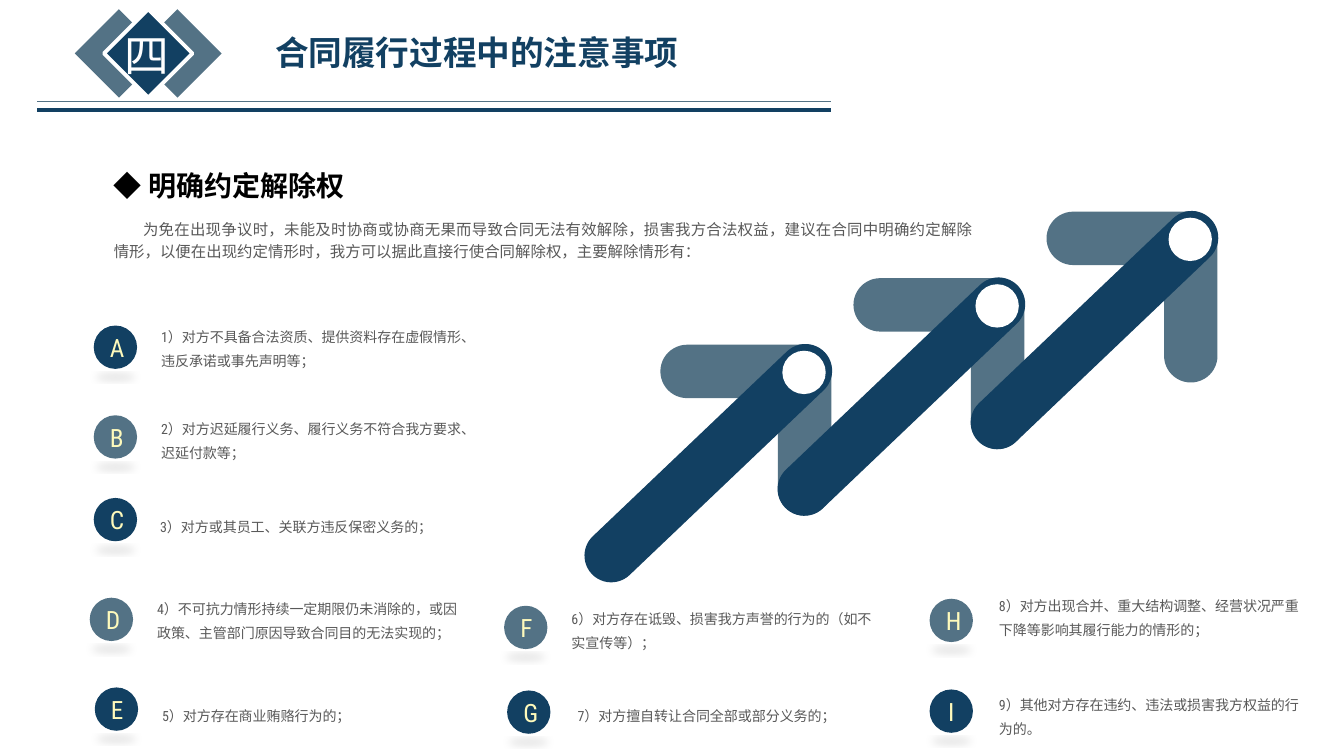
from lxml import etree
from pptx import Presentation
from pptx.dml.color import RGBColor
from pptx.enum.shapes import MSO_CONNECTOR, MSO_SHAPE as SHAPE
from pptx.enum.text import MSO_ANCHOR, MSO_AUTO_SIZE as AUTO_SIZE, PP_ALIGN as ALIGN
from pptx.oxml import parse_xml
from pptx.oxml.ns import nsdecls, qn
from pptx.util import Inches, Pt

NAVY, SLATE, WHITE, GREY, CREAM = "124062", "537285", "FFFFFF", "595959", "FEFABC"
BODY_FONT = "Roboto Condensed"
SHADOW = (
    f'<a:effectLst {nsdecls("a")}><a:outerShdw blurRad="76200" dist="38100" dir="5400000" '
    'sx="90000" sy="-19000" algn="b" rotWithShape="0">'
    '<a:srgbClr val="000000"><a:alpha val="10000"/></a:srgbClr></a:outerShdw></a:effectLst>'
)


def add_solid(shapes, kind, left, top, width, height, color, rotation=0):
    solid = shapes.add_shape(kind, Inches(left), Inches(top), Inches(width), Inches(height))
    solid.shadow.inherit = False
    solid.fill.solid()
    solid.fill.fore_color.rgb = RGBColor.from_string(color)
    solid.line.fill.background()
    solid.rotation = rotation
    return solid


def set_text(paragraph, text, size, color, font=BODY_FONT, bold=False):
    paragraph.text = text
    paragraph.font.size = Pt(size)
    paragraph.font.name = font
    paragraph.font.bold = bold
    paragraph.font.color.rgb = RGBColor.from_string(color)


prs = Presentation()
prs.slide_width, prs.slide_height = Inches(13.33), Inches(7.5)
slide = prs.slides.add_slide(prs.slide_layouts[6])
shapes = slide.shapes

# Three rising arrows, each one step right and up
arrows = shapes.add_group_shape().shapes
for step in range(3):
    dx, dy = 1.915 * step, -0.66 * step
    for left, top, length, rotation, color in [
        (6.55, 3.42, 1.7, 0, SLATE),
        (7.13, 4, 1.7, 90, SLATE),
        (5.43, 4.33, 3.19, 136.4, NAVY),
    ]:
        bar = add_solid(arrows, SHAPE.ROUNDED_RECTANGLE, left + dx, top + dy,
                        length, 0.53, color, rotation)
        bar.adjustments[0] = 0.5
    add_solid(arrows, SHAPE.OVAL, 7.76 + dx, 3.48 + dy, 0.43, 0.43, WHITE)

# Header rules
for y, weight, color in [(1.01, 1, SLATE), (1.09, 3, NAVY)]:
    rule = shapes.add_connector(MSO_CONNECTOR.STRAIGHT, Inches(0.37), Inches(y),
                                Inches(8.24), Inches(y))
    rule.line.width = Pt(weight)
    rule.line.color.rgb = RGBColor.from_string(color)
    etree.SubElement(rule._element.spPr, qn("a:effectLst"))

# Header diamonds
for left, color in [(1.45, SLATE), (0.87, SLATE), (1.16, NAVY)]:
    diamond = add_solid(shapes, SHAPE.RECTANGLE, left, 0.22, 0.62, 0.62, color, 45)
diamond.line.width = Pt(2.75)
diamond.line.color.rgb = RGBColor.from_string(WHITE)

# Section number and title
for left, top, width, height, text, size, color, font, bold in [
    (1.14, 0.23, 0.65, 0.64, "四", 32, WHITE, BODY_FONT, False),
    (2.63, 0.27, 4.26, 0.5, "合同履行过程中的注意事项", 24, NAVY, "Montserrat", True),
]:
    header = shapes.add_textbox(Inches(left), Inches(top), Inches(width), Inches(height))
    header.text_frame.word_wrap = False
    header.text_frame.auto_size = AUTO_SIZE.SHAPE_TO_FIT_TEXT
    set_text(header.text_frame.paragraphs[0], text, size, color, font, bold)

# Introduction
intro = shapes.add_textbox(Inches(1.03), Inches(1.68), Inches(8.72), Inches(0.96)).text_frame
intro.word_wrap = True
intro.auto_size = AUTO_SIZE.SHAPE_TO_FIT_TEXT
intro.margin_top = Inches(0.1)
heading, reason = intro.paragraphs[0], intro.add_paragraph()
set_text(heading, "◆ 明确约定解除权", 20, "000000", "Noto Sans CJK SC", True)
set_text(reason, "为免在出现争议时，未能及时协商或协商无果而导致合同无法有效解除，损害我方合法权益，"
         "建议在合同中明确约定解除情形，以便在出现约定情形时，我方可以据此直接行使合同解除权，"
         "主要解除情形有：", 11, GREY)
for paragraph in (heading, reason):
    paragraph.alignment = ALIGN.JUSTIFY
    paragraph.line_spacing = Pt(16)
reason.space_before = Pt(10)
reason._p.get_or_add_pPr().set("indent", str(Inches(0.29)))

# Termination cases: badge position and colour, text position, wording
cases = [
    (0.93, 3.23, NAVY, 1.5, 3.14, "对方不具备合法资质、提供资料存在虚假情形、违反承诺或事先声明等；"),
    (0.93, 4.12, SLATE, 1.5, 4.05, "对方迟延履行义务、履行义务不符合我方要求、迟延付款等；"),
    (0.93, 4.94, NAVY, 1.49, 5.03, "对方或其员工、关联方违反保密义务的；"),
    (0.89, 5.93, SLATE, 1.46, 5.84,
     "不可抗力情形持续一定期限仍未消除的，或因政策、主管部门原因导致合同目的无法实现的；"),
    (0.94, 6.82, NAVY, 1.51, 6.9, "对方存在商业贿赂行为的；"),
    (5, 6.01, SLATE, 5.57, 5.94, "对方存在诋毁、损害我方声誉的行为的（如不实宣传等）；"),
    (5.03, 6.85, NAVY, 5.63, 6.9, "对方擅自转让合同全部或部分义务的；"),
    (9.22, 5.94, SLATE, 9.81, 5.81,
     "对方出现合并、重大结构调整、经营状况严重下降等影响其履行能力的情形的；"),
    (9.22, 6.84, NAVY, 9.81, 6.79, "其他对方存在违约、违法或损害我方权益的行为的。"),
]
for number, (badge_x, badge_y, color, text_x, text_y, wording) in enumerate(cases, 1):
    badge = add_solid(shapes, SHAPE.OVAL, badge_x, badge_y, 0.43, 0.43, color)
    properties = badge._element.spPr
    properties.replace(properties.find(qn("a:effectLst")), parse_xml(SHADOW))
    badge.text_frame.vertical_anchor = MSO_ANCHOR.MIDDLE
    letter = badge.text_frame.paragraphs[0]
    set_text(letter, "ABCDEFGHI"[number - 1], 18, CREAM)
    letter.alignment = ALIGN.CENTER

    height = 0.58 if len(wording) > 20 else 0.31
    case = shapes.add_textbox(Inches(text_x), Inches(text_y), Inches(3.24), Inches(height))
    case.text_frame.word_wrap = True
    case.text_frame.auto_size = AUTO_SIZE.SHAPE_TO_FIT_TEXT
    set_text(case.text_frame.paragraphs[0], f"{number}）{wording}", 10, GREY)
    case.text_frame.paragraphs[0].line_spacing = Pt(17)

prs.save("out.pptx")
